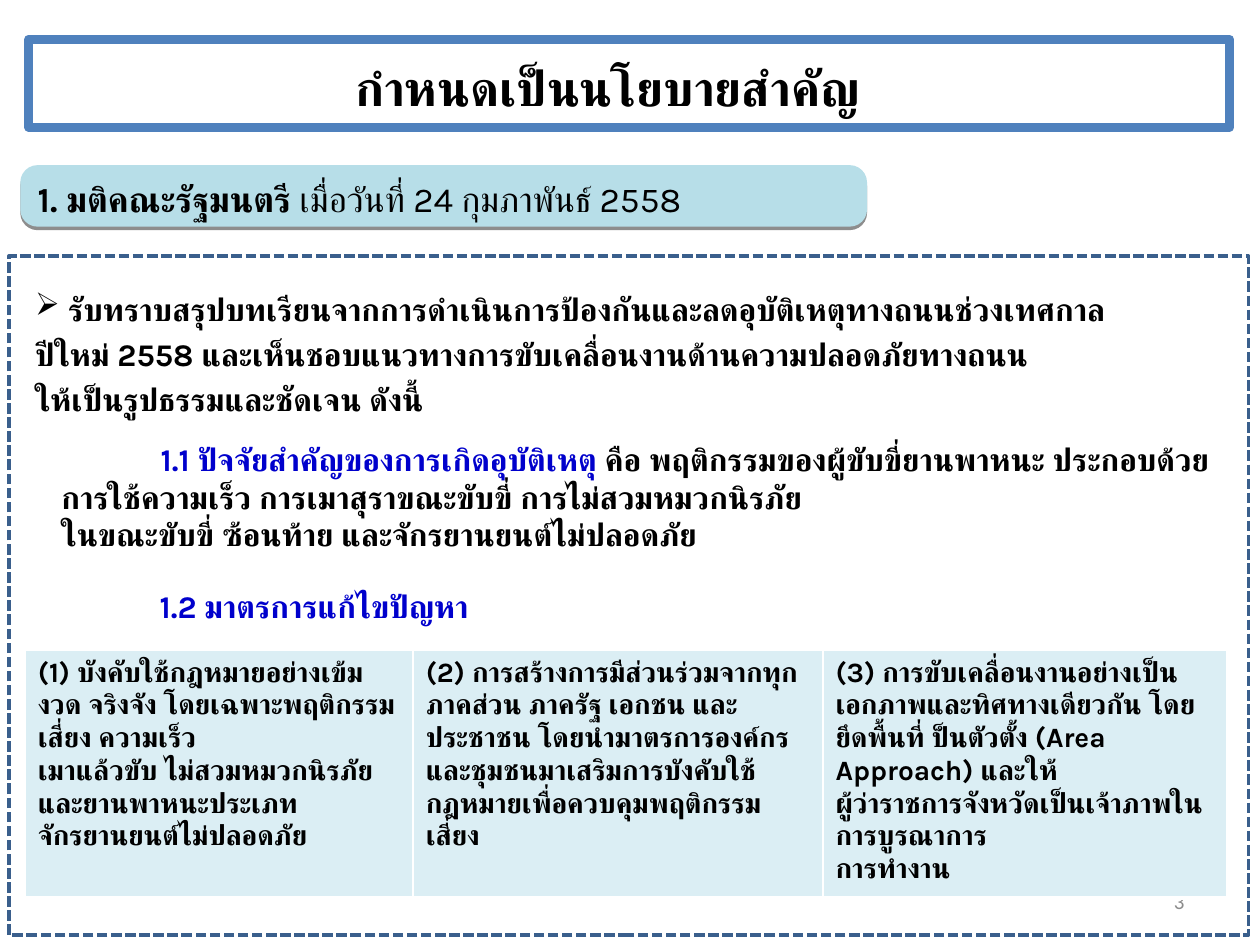
"""Build the slide on the cabinet resolution about road safety policy."""
from dataclasses import dataclass
from typing import Optional

from lxml import etree
from pptx import Presentation
from pptx import util as u
from pptx.dml.color import RGBColor
from pptx.enum import dml, shapes, text
from pptx.oxml.ns import qn

COLOURS = {
    "black": "000000", "white": "FFFFFF", "blue": "0000CC", "grey": "8C8C8C",
    "frame": "4F81BD", "dash": "3A5F8C", "badge": "B7DEE8", "cell": "DBEEF4",
    "shadow": "1C1C1C",
}


@dataclass(frozen=True)
class Box:
    left: float
    top: float
    width: float
    height: float

    def lengths(self) -> tuple:
        return tuple(u.Cm(n) for n in (self.left, self.top, self.width, self.height))


@dataclass(frozen=True)
class Words:
    wording: str
    size: float
    colour: str = "black"
    bold: bool = True
    font: str = "Karla"


@dataclass(frozen=True)
class Panel:
    box: Box
    preset: shapes.MSO_SHAPE = shapes.MSO_SHAPE.RECTANGLE
    fill: Optional[str] = None
    line: Optional[str] = None
    weight: float = 0
    dashed: bool = False


@dataclass(frozen=True)
class Passage:
    box: Box
    words: tuple
    align: text.PP_ALIGN = text.PP_ALIGN.LEFT
    anchor: text.MSO_ANCHOR = text.MSO_ANCHOR.TOP
    grow: bool = True
    wrap: bool = True
    indent: float = 0
    bullet: str = ""


def rgb(name: str) -> RGBColor:
    return RGBColor.from_string(COLOURS[name])


def write(paragraph, words: Words) -> None:
    for number, line in enumerate(words.wording.split("\n")):
        if number:
            paragraph.add_line_break()
        run = paragraph.add_run()
        run.text = line
        run.font.name = words.font
        run.font.size = u.Pt(words.size)
        run.font.bold = words.bold
        run.font.color.rgb = rgb(words.colour)
        etree.SubElement(run.font._element, qn("a:cs"), typeface=words.font)


def draw_panel(slide, panel: Panel):
    shape = slide.shapes.add_shape(panel.preset, *panel.box.lengths())
    shape.shadow.inherit = False
    if panel.fill:
        shape.fill.solid()
        shape.fill.fore_color.rgb = rgb(panel.fill)
    else:
        shape.fill.background()
    if panel.line:
        shape.line.color.rgb = rgb(panel.line)
        shape.line.width = u.Pt(panel.weight)
    else:
        shape.line.fill.background()
    if panel.dashed:
        shape.line.dash_style = dml.MSO_LINE.SQUARE_DOT
    return shape


def drop_shadow(shape) -> None:
    effects = shape._element.spPr.find(qn("a:effectLst"))
    shadow = etree.SubElement(effects, qn("a:outerShdw"), blurRad="0",
                              dist=str(u.Pt(2)), dir="5400000", rotWithShape="0")
    colour = etree.SubElement(shadow, qn("a:srgbClr"), val=COLOURS["shadow"])
    etree.SubElement(colour, qn("a:alpha"), val="50000")


def draw_passage(slide, passage: Passage) -> None:
    frame = slide.shapes.add_textbox(*passage.box.lengths()).text_frame
    frame.word_wrap = passage.wrap
    frame.vertical_anchor = passage.anchor
    if passage.grow:
        frame.auto_size = text.MSO_AUTO_SIZE.SHAPE_TO_FIT_TEXT
    paragraph = frame.paragraphs[0]
    paragraph.alignment = passage.align
    properties = paragraph._p.get_or_add_pPr()
    if passage.indent:
        properties.set("marL", "0")
        properties.set("indent", str(u.Cm(passage.indent)))
    if passage.bullet:
        paragraph.line_spacing = 1.2
        paragraph.space_before = u.Pt(6)
        etree.SubElement(properties, qn("a:buChar"), char=passage.bullet)
    for words in passage.words:
        write(paragraph, words)


def draw_measures(slide, box: Box, widths: tuple, measures: tuple) -> None:
    table = slide.shapes.add_table(1, len(measures), *box.lengths()).table
    for column, width, measure in zip(table.columns, widths, measures):
        column.width = u.Cm(width)
    for cell, measure in zip(table.rows[0].cells, measures):
        properties = cell._tc.get_or_add_tcPr()
        for side, weight in (("L", 1), ("R", 1), ("T", 1), ("B", 3)):
            border = etree.SubElement(properties, qn(f"a:ln{side}"), w=str(u.Pt(weight)))
            fill = etree.SubElement(border, qn("a:solidFill"))
            etree.SubElement(fill, qn("a:srgbClr"), val=COLOURS["white"])
        cell.fill.solid()
        cell.fill.fore_color.rgb = rgb("cell")
        write(cell.text_frame.paragraphs[0], Words(measure, 16))


OUTLINE = Panel(Box(0.18, 5.16, 24.99, 13.69), line="dash", weight=2, dashed=True)
BADGE = Panel(Box(0.41, 3.33, 17.07, 1.24), shapes.MSO_SHAPE.ROUNDED_RECTANGLE, fill="badge")
TITLE_FRAME = Panel(Box(0.58, 0.79, 24.21, 1.78), fill="white", line="frame", weight=5)

PAGE_NUMBER = Passage(Box(18.21, 17.65, 5.92, 1.02),
                      (Words("3", 12, "grey", False, "Calibri"),),
                      text.PP_ALIGN.RIGHT, text.MSO_ANCHOR.MIDDLE, grow=False)
PASSAGES = (
    Passage(Box(6.25, 1.02, 11.99, 1.45), (Words("กำหนดเป็นนโยบายสำคัญ", 28),),
            text.PP_ALIGN.CENTER, text.MSO_ANCHOR.MIDDLE, wrap=False),
    Passage(Box(0.51, 3.45, 16.74, 1.12),
            (Words("1. มติคณะรัฐมนตรี", 20),
             Words(" เมื่อวันที่ 24 กุมภาพันธ์ 2558", 20, bold=False))),
    Passage(Box(0.46, 5.56, 24.59, 3.02),
            (Words(" รับทราบสรุปบทเรียนจากการดำเนินการป้องกันและลดอุบัติเหตุทางถนนช่วงเทศกาล\n"
                   "ปีใหม่ 2558 และเห็นชอบแนวทางการขับเคลื่อนงานด้านความปลอดภัยทางถนน\n"
                   "ให้เป็นรูปธรรมและชัดเจน ดังนี้", 18),), bullet="➢"),
    Passage(Box(0.99, 8.74, 24, 2.57),
            (Words("1.1 ปัจจัยสำคัญของการเกิดอุบัติเหตุ ", 18, "blue"),
             Words("คือ พฤติกรรมของผู้ขับขี่ยานพาหนะ ประกอบด้วย การใช้ความเร็ว "
                   "การเมาสุราขณะขับขี่ การไม่สวมหมวกนิรภัย\n"
                   "ในขณะขับขี่ ซ้อนท้าย และจักรยานยนต์ไม่ปลอดภัย", 18)), indent=2),
    Passage(Box(2.97, 11.71, 10.92, 1.02), (Words("1.2 มาตรการแก้ไขปัญหา", 18, "blue"),)),
)
MEASURES = (
    "(1) บังคับใช้กฎหมายอย่างเข้มงวด จริงจัง โดยเฉพาะพฤติกรรมเสี่ยง ความเร็ว \n"
    "เมาแล้วขับ ไม่สวมหมวกนิรภัย และยานพาหนะประเภทจักรยานยนต์ไม่ปลอดภัย",
    "(2) การสร้างการมีส่วนร่วมจากทุกภาคส่วน ภาครัฐ เอกชน และประชาชน "
    "โดยนำมาตรการองค์กรและชุมชนมาเสริมการบังคับใช้กฎหมายเพื่อควบคุมพฤติกรรมเสี่ยง",
    "(3) การขับเคลื่อนงานอย่างเป็นเอกภาพและทิศทางเดียวกัน โดยยึดพื้นที่ ป็นตัวตั้ง "
    "(Area Approach) และให้\nผู้ว่าราชการจังหวัดเป็นเจ้าภาพในการบูรณาการ\nการทำงาน",
)


def main() -> None:
    deck = Presentation()
    deck.slide_width, deck.slide_height = u.Cm(25.4), u.Cm(19.05)
    slide = deck.slides.add_slide(deck.slide_layouts[6])
    draw_panel(slide, OUTLINE)
    badge = draw_panel(slide, BADGE)
    badge.adjustments[0] = 0.28
    drop_shadow(badge)
    draw_passage(slide, PAGE_NUMBER)
    draw_panel(slide, TITLE_FRAME)
    for passage in PASSAGES:
        draw_passage(slide, passage)
    draw_measures(slide, Box(0.51, 13.11, 24.21, 4.95), (7.82, 8.26, 8.13), MEASURES)
    deck.save("out.pptx")


if __name__ == "__main__":
    main()
